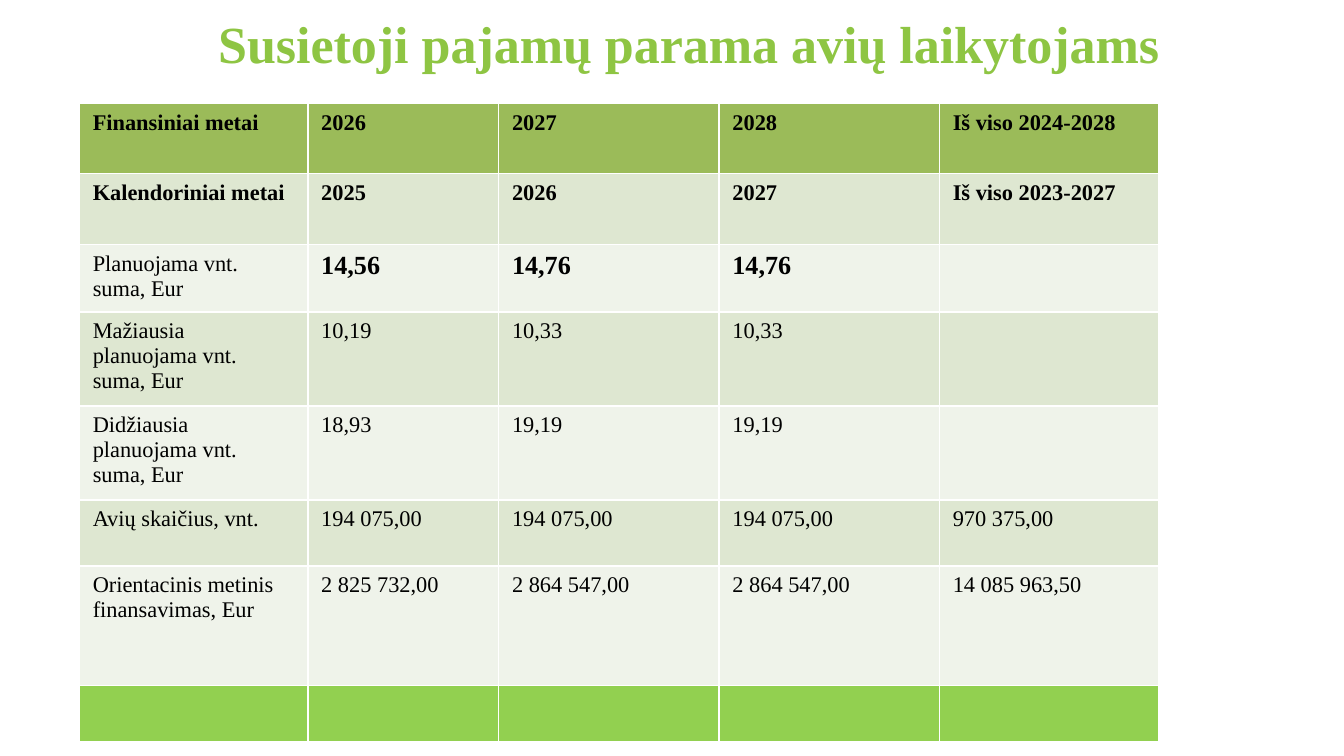
from pptx import Presentation
from pptx.dml.color import RGBColor
from pptx.enum.text import MSO_ANCHOR, PP_ALIGN
from pptx.util import Inches, Pt

FONT = "Times New Roman"
TITLE_GREEN = RGBColor(0x8E, 0xC5, 0x43)
HEADER_GREEN = RGBColor(0x9B, 0xBB, 0x59)
DARK_BAND = RGBColor(0xDE, 0xE7, 0xD1)
LIGHT_BAND = RGBColor(0xEF, 0xF3, 0xEA)
FOOTER_GREEN = RGBColor(0x92, 0xD0, 0x50)
BLACK = RGBColor(0, 0, 0)

SLIDE_WIDTH = Inches(10)
SLIDE_HEIGHT = SLIDE_WIDTH * 9 // 16

COLUMN_WIDTHS = [1.7, 1.42, 1.64, 1.64, 1.63]
ROW_HEIGHTS = [0.52, 0.53, 0.49, 0.69, 0.69, 0.49, 0.89, 0.42]
ROWS = [
    ["Finansiniai metai", "2026", "2027", "2028", "Iš viso 2024-2028"],
    ["Kalendoriniai metai", "2025", "2026", "2027", "Iš viso 2023-2027"],
    ["Planuojama vnt. suma, Eur", "14,56", "14,76", "14,76", ""],
    ["Mažiausia planuojama vnt. suma, Eur", "10,19", "10,33", "10,33", ""],
    ["Didžiausia planuojama vnt. suma, Eur", "18,93", "19,19", "19,19", ""],
    ["Avių skaičius, vnt.", "194 075,00", "194 075,00", "194 075,00", "970 375,00"],
    ["Orientacinis metinis finansavimas, Eur", "2 825 732,00", "2 864 547,00",
     "2 864 547,00", "14 085 963,50"],
    [""] * 5,
]
HEADING_ROWS = 2
UNIT_SUM_ROW = 2


def set_font(paragraph, size, color, bold):
    font = paragraph.font
    font.name, font.size, font.bold = FONT, Pt(size), bold
    font.color.rgb = color


def add_title(slide, text):
    box = slide.shapes.add_textbox(Inches(0.75), Inches(0.07), Inches(8.75), Inches(0.5))
    frame = box.text_frame
    frame.word_wrap = True
    frame.vertical_anchor = MSO_ANCHOR.MIDDLE
    paragraph = frame.paragraphs[0]
    paragraph.text = text
    paragraph.alignment = PP_ALIGN.CENTER
    set_font(paragraph, 27.9, TITLE_GREEN, True)


def row_fill(row):
    if row == 0:
        return HEADER_GREEN
    if row == len(ROWS) - 1:
        return FOOTER_GREEN
    return DARK_BAND if row % 2 else LIGHT_BAND


def style_cell(cell, row, column, text):
    cell.fill.solid()
    cell.fill.fore_color.rgb = row_fill(row)
    cell.text = text
    is_unit_sum = row == UNIT_SUM_ROW and column > 0
    set_font(cell.text_frame.paragraphs[0], 14 if is_unit_sum else 12, BLACK,
             row < HEADING_ROWS or is_unit_sum)


def add_support_table(slide):
    # The default table style draws the white grid and the thick header rule
    frame = slide.shapes.add_table(
        len(ROWS), len(COLUMN_WIDTHS), Inches(0.59), Inches(0.77),
        Inches(sum(COLUMN_WIDTHS)), Inches(sum(ROW_HEIGHTS)))
    table = frame.table
    for column, width in zip(table.columns, COLUMN_WIDTHS):
        column.width = Inches(width)
    for row, height in zip(table.rows, ROW_HEIGHTS):
        row.height = Inches(height)
    for row, texts in enumerate(ROWS):
        for column, text in enumerate(texts):
            style_cell(table.cell(row, column), row, column, text)


def main():
    presentation = Presentation()
    presentation.slide_width, presentation.slide_height = SLIDE_WIDTH, SLIDE_HEIGHT
    slide = presentation.slides.add_slide(presentation.slide_layouts[6])
    add_title(slide, "Susietoji pajamų parama avių laikytojams")
    add_support_table(slide)
    presentation.save("out.pptx")


if __name__ == "__main__":
    main()
